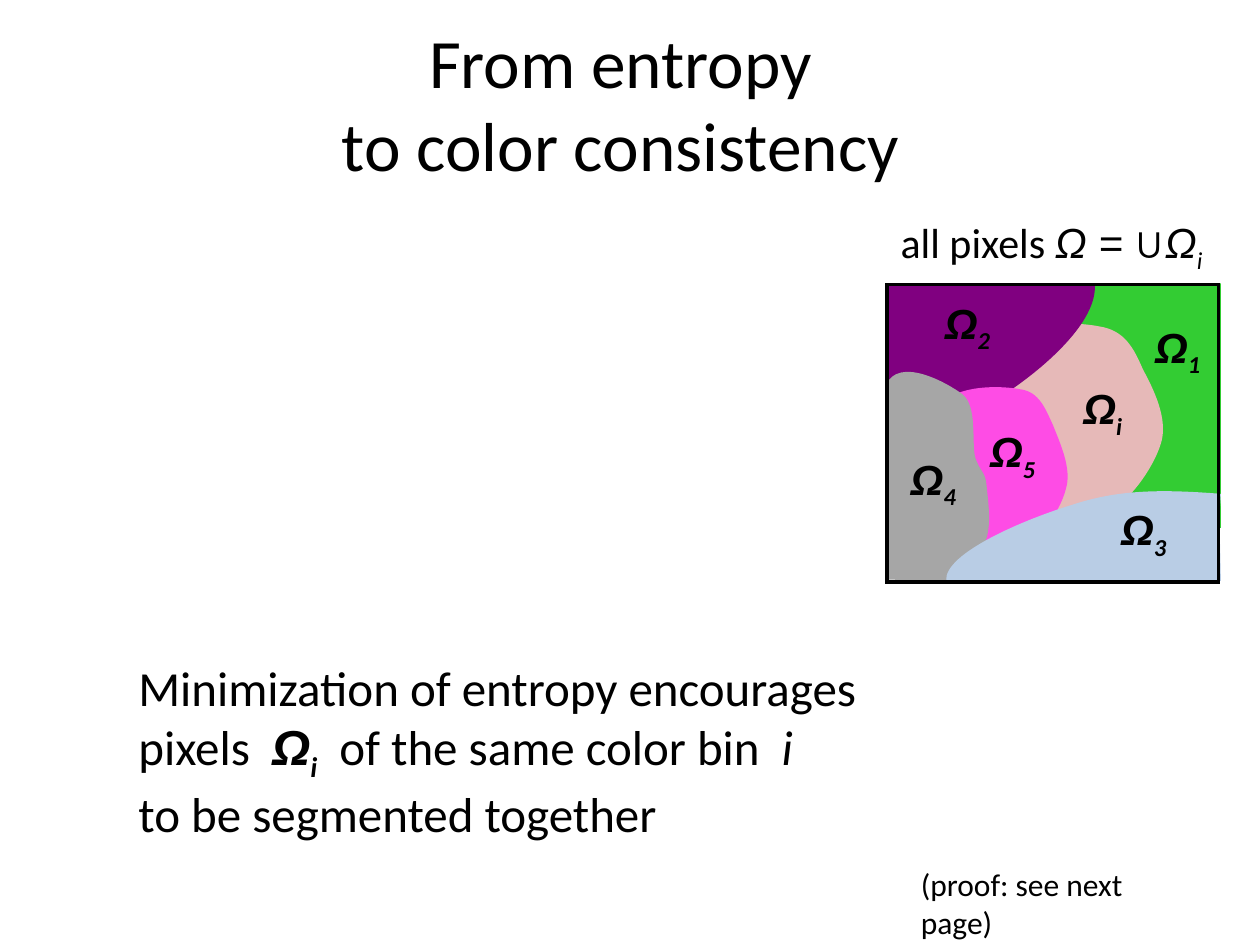
import pptx
import pptx.dml.color
import pptx.enum.shapes
import pptx.enum.text
import pptx.oxml.ns
import pptx.util
import lxml.etree

PX = 9144  # EMU per px, 100 px to the inch

# The one straight-edged region: colour, corners
POLYGON = ("33CC33", [(836, 225), (969, 225), (969, 419), (888, 425), (837, 339)])

# Curved regions: colour, start point, then cubic curves (two controls and an end)
CURVED_REGIONS = [
    ("E6B9B8", (872, 259), [
        (852, 255, 800, 254, 785, 274), (770, 295, 769, 359, 783, 381),
        (797, 404, 847, 415, 870, 410), (893, 405, 915, 372, 921, 353),
        (928, 333, 915, 308, 907, 293), (900, 277, 893, 262, 872, 259)]),
    ("800080", (704, 328), [
        (742, 334, 767, 332, 794, 315), (821, 298, 870, 259, 869, 227),
        (746, 227, 791, 225, 704, 227), (706, 356, 706, 278, 704, 328)]),
    ("FE4CE5", (810, 309), [
        (795, 306, 758, 305, 747, 322), (736, 339, 734, 393, 745, 412),
        (755, 431, 791, 440, 808, 436), (825, 432, 842, 404, 846, 388),
        (851, 372, 841, 351, 836, 338), (830, 325, 825, 311, 810, 309)]),
    ("A6A6A6", (703, 306), [
        (713, 282, 752, 304, 764, 313), (776, 323, 771, 351, 774, 363),
        (778, 375, 782, 374, 783, 385), (784, 396, 787, 414, 783, 427),
        (779, 440, 778, 447, 761, 461), (727, 461, 786, 462, 704, 460),
        (704, 335, 703, 363, 703, 306)]),
    ("B9CDE5", (969, 392), [
        (919, 388, 886, 389, 850, 401), (814, 412, 749, 439, 751, 461),
        (913, 461, 854, 463, 969, 461), (967, 373, 967, 426, 969, 392)]),
]

# Subscript, left, top, width
LABELS = [("i", 850, 299, 52), ("1", 907, 250, 57), ("2", 740, 231, 57),
          ("4", 713, 355, 57), ("3", 880, 395, 57), ("5", 776, 333, 57)]


def px(n):
    return pptx.util.Emu(n * PX)


def color(hex_code):
    return pptx.dml.color.RGBColor.from_string(hex_code)


def add_run(p, text, size, font="Calibri", bold=False, italic=False, sub=False):
    r = p.add_run()
    r.text = text
    r.font.size = pptx.util.Pt(size)
    r.font.name = font
    r.font.bold = bold
    r.font.italic = italic
    r.font.color.rgb = color("000000")
    if sub:
        r.font._element.set("baseline", "-25000")


def add_text(shapes, box, paragraphs, size, wrap=False, align=None, anchor=None):
    """Each paragraph is a list of (text, format) runs; None is a line break."""
    sp = shapes.add_textbox(*map(px, box))
    tf = sp.text_frame
    tf.word_wrap = wrap
    tf.vertical_anchor = anchor
    for n, runs in enumerate(paragraphs):
        p = tf.add_paragraph() if n else tf.paragraphs[0]
        p.alignment = align
        for run in runs:
            if run is None:
                p.add_line_break()
            else:
                add_run(p, run[0], size, **run[1])


def omega(subscript):
    style = {"bold": True, "italic": True}
    return [("Ω", {"font": "Arial", **style}), (subscript, {"sub": True, **style})]


def add_polygon(shapes, fill, points):
    builder = shapes.build_freeform(*points[0], scale=PX)
    builder.add_line_segments(points[1:], close=True)
    sp = builder.convert_to_shape()
    sp.shadow.inherit = False
    sp.fill.solid()
    sp.fill.fore_color.rgb = color(fill)
    sp.line.fill.background()
    return sp


def add_curved_region(shapes, fill, start, curves):
    points = [start]
    for c in curves:
        points += [c[0:2], c[2:4], c[4:6]]
    sp = add_polygon(shapes, fill, points)
    # Merge every three line segments into one cubic curve
    lines = list(sp._element.iter(pptx.oxml.ns.qn("a:lnTo")))[:3 * len(curves)]
    for first, second, third in zip(lines[0::3], lines[1::3], lines[2::3]):
        first.tag = pptx.oxml.ns.qn("a:cubicBezTo")
        for line in (second, third):
            first.append(line[0])
            line.getparent().remove(line)


def add_frame(shapes, box):
    sp = shapes.add_shape(pptx.enum.shapes.MSO_SHAPE.RECTANGLE, *map(px, box))
    sp.shadow.inherit = False
    sp.fill.background()
    sp.line.color.rgb = color("000000")
    sp.line.width = pptx.util.Pt(1.75)
    miter = lxml.etree.SubElement(sp.line._get_or_add_ln(), pptx.oxml.ns.qn("a:miter"))
    miter.set("lim", "800000")


def main():
    prs = pptx.Presentation()
    prs.slide_width, prs.slide_height = px(1000), px(750)
    s = prs.slides.add_slide(prs.slide_layouts[6])

    # Title
    add_text(s.shapes, (47, 21, 891, 121),
             [[("From entropy", {}), None, ("to color consistency", {})]],
             39.6, wrap=True, align=pptx.enum.text.PP_ALIGN.CENTER,
             anchor=pptx.enum.text.MSO_ANCHOR.MIDDLE)

    # Caption and statement
    add_text(s.shapes, (705, 167, 270, 50), [[
        ("all pixels ", {}),
        ("Ω = ", {"font": "Arial", "italic": True}),
        ("∪", {"font": "Arial"}),
        ("Ω", {"font": "Arial", "italic": True}),
        ("i", {"italic": True, "sub": True})]], 24)
    add_text(s.shapes, (100, 517, 649, 151), [
        [("Minimization of entropy encourages", {})],
        [("pixels  ", {}), *omega("i"),
         ("  of the same color bin  ", {}), ("i", {"italic": True})],
        [("to be segmented together", {})]], 28)
    add_text(s.shapes, (721, 682, 241, 37),
             [[("(proof: see next page)", {})]], 18, wrap=True)

    # Partition of the pixels
    partition = s.shapes.add_group_shape().shapes
    add_polygon(partition, *POLYGON)
    for region in CURVED_REGIONS:
        add_curved_region(partition, *region)
    add_frame(partition, (704, 226, 263, 236))

    # Region labels
    labels = s.shapes.add_group_shape().shapes
    for subscript, left, top, width in LABELS:
        add_text(labels, (left, top, width, 50), [omega(subscript)], 24)

    prs.save("out.pptx")


if __name__ == "__main__":
    main()
